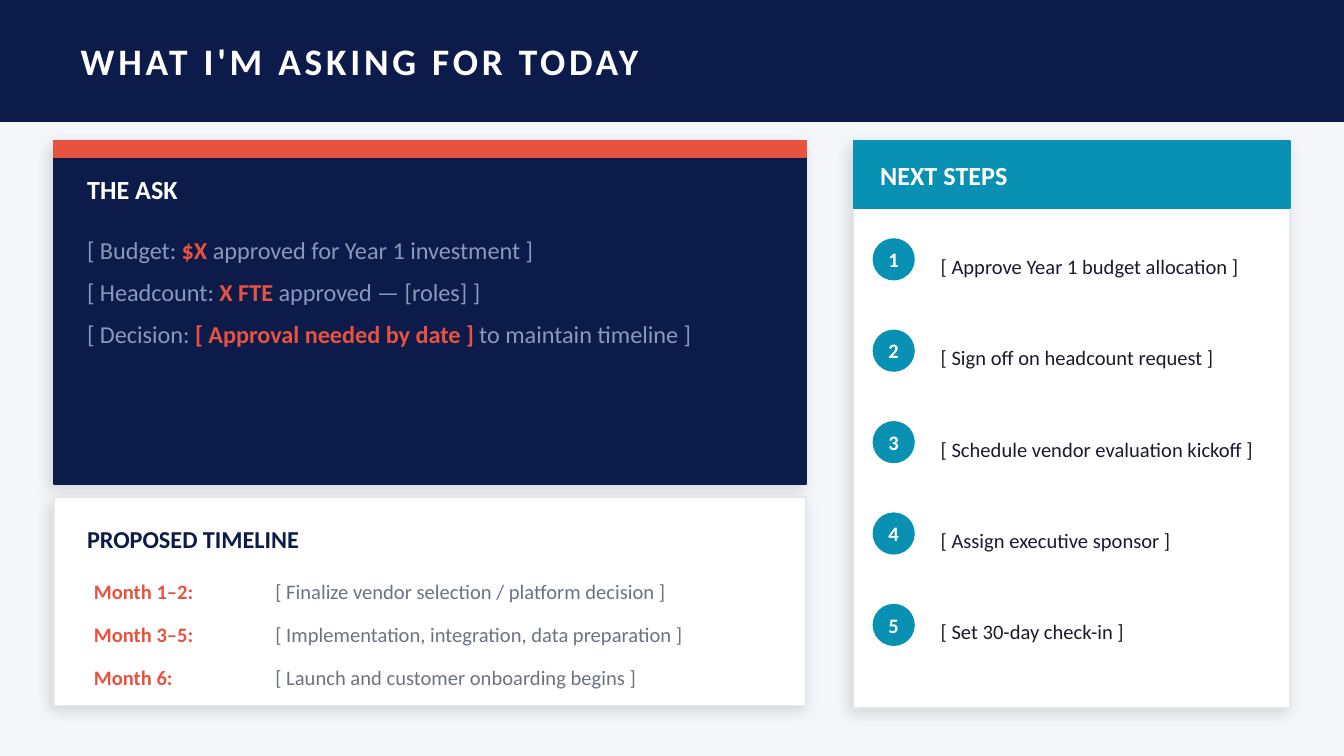
from dataclasses import dataclass
from typing import NamedTuple, Optional

import lxml.etree
import pptx
import pptx.dml.color
import pptx.enum.shapes
import pptx.enum.text
import pptx.oxml.ns
import pptx.shapes.autoshape
import pptx.slide
import pptx.text.text
import pptx.util

Pt = pptx.util.Pt
Align = pptx.enum.text.PP_ALIGN
Anchor = pptx.enum.text.MSO_ANCHOR
Preset = pptx.enum.shapes.MSO_SHAPE


@dataclass(frozen=True)
class Theme:
    font: str = "Calibri"
    backdrop: str = "F5F6FA"
    navy: str = "0D1B4B"
    coral: str = "E8533F"
    teal: str = "0891B2"
    white: str = "FFFFFF"
    border: str = "E5E7EB"
    pale: str = "8899BB"
    grey: str = "6B7280"
    ink: str = "1A1A2E"
    title_size: float = 20
    heading_size: float = 14
    ask_size: float = 13
    body_size: float = 11


THEME = Theme()


class Box(NamedTuple):
    left: float
    top: float
    width: float
    height: float


class Style(NamedTuple):
    size: float
    color: str
    bold: bool = False


class AskLine(NamedTuple):
    label: str
    highlight: str
    rest: str


class Milestone(NamedTuple):
    period: str
    task: str


ASK_LINES = [
    AskLine("[ Budget: ", "$X ", "approved for Year 1 investment ]"),
    AskLine("[ Headcount: ", "X FTE ", "approved — [roles] ]"),
    AskLine("[ Decision: ", "[ Approval needed by date ] ", "to maintain timeline ]"),
]
MILESTONES = [
    Milestone("Month 1–2:", "[ Finalize vendor selection / platform decision ]"),
    Milestone("Month 3–5:", "[ Implementation, integration, data preparation ]"),
    Milestone("Month 6:", "[ Launch and customer onboarding begins ]"),
]
NEXT_STEPS = [
    "[ Approve Year 1 budget allocation ]",
    "[ Sign off on headcount request ]",
    "[ Schedule vendor evaluation kickoff ]",
    "[ Assign executive sponsor ]",
    "[ Set 30-day check-in ]",
]

LEFT_EDGE, CARD_TOP, LEFT_WIDTH = 28.8, 75.6, 403.2
RIGHT_EDGE, RIGHT_WIDTH = 457.2, 234
TEXT_LEFT = 39.6
MILESTONE_TOP, MILESTONE_PITCH = 306, 23.04
STEP_TOP, STEP_PITCH, BADGE = 128.16, 48.96, 21.6


def rgb(color: str) -> pptx.dml.color.RGBColor:
    return pptx.dml.color.RGBColor.from_string(color)


def style_span(span: pptx.text.text._Run, style: Style) -> None:
    span.font.name = THEME.font
    span.font.size = Pt(style.size)
    span.font.bold = style.bold
    span.font.color.rgb = rgb(style.color)


def add_panel(page: pptx.slide.Slide, box: Box, fill: str, line: Optional[str] = None,
              preset: Preset = Preset.RECTANGLE) -> pptx.shapes.autoshape.Shape:
    panel = page.shapes.add_shape(preset, *map(Pt, box))
    panel.shadow.inherit = False
    panel.fill.solid()
    panel.fill.fore_color.rgb = rgb(fill)
    panel.line.color.rgb = rgb(line or fill)
    panel.line.width = Pt(1)
    return panel


def add_card(page: pptx.slide.Slide, box: Box, fill: str, line: str) -> None:
    """Draw a panel with a soft shadow falling to the lower left."""
    qn = pptx.oxml.ns.qn
    card = add_panel(page, box, fill, line)
    effects = card._element.spPr.find(qn("a:effectLst"))
    shadow = lxml.etree.SubElement(
        effects, qn("a:outerShdw"), blurRad=str(Pt(8)), dist=str(Pt(3)),
        dir=str(135 * 60000), algn="bl", rotWithShape="0")
    color = lxml.etree.SubElement(shadow, qn("a:srgbClr"), val="000000")
    lxml.etree.SubElement(color, qn("a:alpha"), val="12000")


def add_label(page: pptx.slide.Slide, box: Box, text: str, style: Style) -> None:
    frame = page.shapes.add_textbox(*map(Pt, box)).text_frame
    frame.word_wrap = True
    frame.vertical_anchor = Anchor.MIDDLE
    frame.text = text
    style_span(frame.paragraphs[0].runs[0], style)


def add_title(page: pptx.slide.Slide) -> None:
    add_panel(page, Box(0, 0, 720, 64.8), THEME.navy)
    title = page.shapes.title
    title.left, title.top, title.width, title.height = map(Pt, Box(36, 0, 648, 64.8))
    frame = title.text_frame
    frame.text = "WHAT I'M ASKING FOR TODAY"
    frame.auto_size = pptx.enum.text.MSO_AUTO_SIZE.NONE
    frame.vertical_anchor = Anchor.MIDDLE
    para = frame.paragraphs[0]
    para.alignment = Align.LEFT
    style_span(para.runs[0], Style(THEME.title_size, THEME.white, True))
    para.runs[0].font._element.set("spc", "200")
    page.shapes._spTree.append(title._element)  # bring in front of the header bar


def add_ask(page: pptx.slide.Slide) -> None:
    add_card(page, Box(LEFT_EDGE, CARD_TOP, LEFT_WIDTH, 183.6), THEME.navy, THEME.navy)
    add_panel(page, Box(LEFT_EDGE, CARD_TOP, LEFT_WIDTH, 8.64), THEME.coral)
    add_label(page, Box(TEXT_LEFT, 84.96, 381.6, 32.4), "THE ASK",
              Style(THEME.heading_size, THEME.white, True))
    frame = page.shapes.add_textbox(*map(Pt, Box(TEXT_LEFT, 122.4, 374.4, 122.4))).text_frame
    frame.word_wrap = True
    plain = Style(THEME.ask_size, THEME.pale)
    strong = Style(THEME.ask_size, THEME.coral, True)
    for index, line in enumerate(ASK_LINES):
        para = frame.add_paragraph() if index else frame.paragraphs[0]
        para.space_after = Pt(7)
        for text, style in zip(line, (plain, strong, plain)):
            span = para.add_run()
            span.text = text
            style_span(span, style)


def add_timeline(page: pptx.slide.Slide) -> None:
    add_card(page, Box(LEFT_EDGE, 266.4, LEFT_WIDTH, 111.6), THEME.white, THEME.border)
    add_label(page, Box(TEXT_LEFT, 275.04, 381.6, 27.36), "PROPOSED TIMELINE",
              Style(THEME.ask_size, THEME.navy, True))
    for index, milestone in enumerate(MILESTONES):
        top = MILESTONE_TOP + index * MILESTONE_PITCH
        add_label(page, Box(43.2, top, 93.6, 21.6), milestone.period,
                  Style(THEME.body_size, THEME.coral, True))
        add_label(page, Box(140.4, top, 277.2, 21.6), milestone.task,
                  Style(THEME.body_size, THEME.grey))


def add_badge(page: pptx.slide.Slide, left: float, top: float, number: int) -> None:
    badge = add_panel(page, Box(left, top, BADGE, BADGE), THEME.teal, preset=Preset.OVAL)
    frame = badge.text_frame
    frame.margin_left = frame.margin_right = frame.margin_top = frame.margin_bottom = 0
    frame.word_wrap = False
    frame.vertical_anchor = Anchor.MIDDLE
    frame.text = str(number)
    frame.paragraphs[0].alignment = Align.CENTER
    style_span(frame.paragraphs[0].runs[0], Style(THEME.body_size, THEME.white, True))


def add_next_steps(page: pptx.slide.Slide) -> None:
    add_card(page, Box(RIGHT_EDGE, CARD_TOP, RIGHT_WIDTH, 303.84), THEME.white, THEME.border)
    add_panel(page, Box(RIGHT_EDGE, CARD_TOP, RIGHT_WIDTH, 36), THEME.teal)
    add_label(page, Box(464.4, CARD_TOP, 219.6, 36), "NEXT STEPS",
              Style(THEME.heading_size, THEME.white, True))
    for index, step in enumerate(NEXT_STEPS):
        top = STEP_TOP + index * STEP_PITCH
        add_badge(page, 468, top, index + 1)
        add_label(page, Box(496.8, top - 3.6, 183.6, 36), step,
                  Style(THEME.body_size, THEME.ink))


def main() -> None:
    deck = pptx.Presentation()
    deck.slide_width, deck.slide_height = Pt(720), Pt(405)
    page = deck.slides.add_slide(deck.slide_layouts.get_by_name("Title Only"))
    page.background.fill.solid()
    page.background.fill.fore_color.rgb = rgb(THEME.backdrop)
    add_title(page)
    add_ask(page)
    add_timeline(page)
    add_next_steps(page)
    deck.save("out.pptx")


if __name__ == "__main__":
    main()
